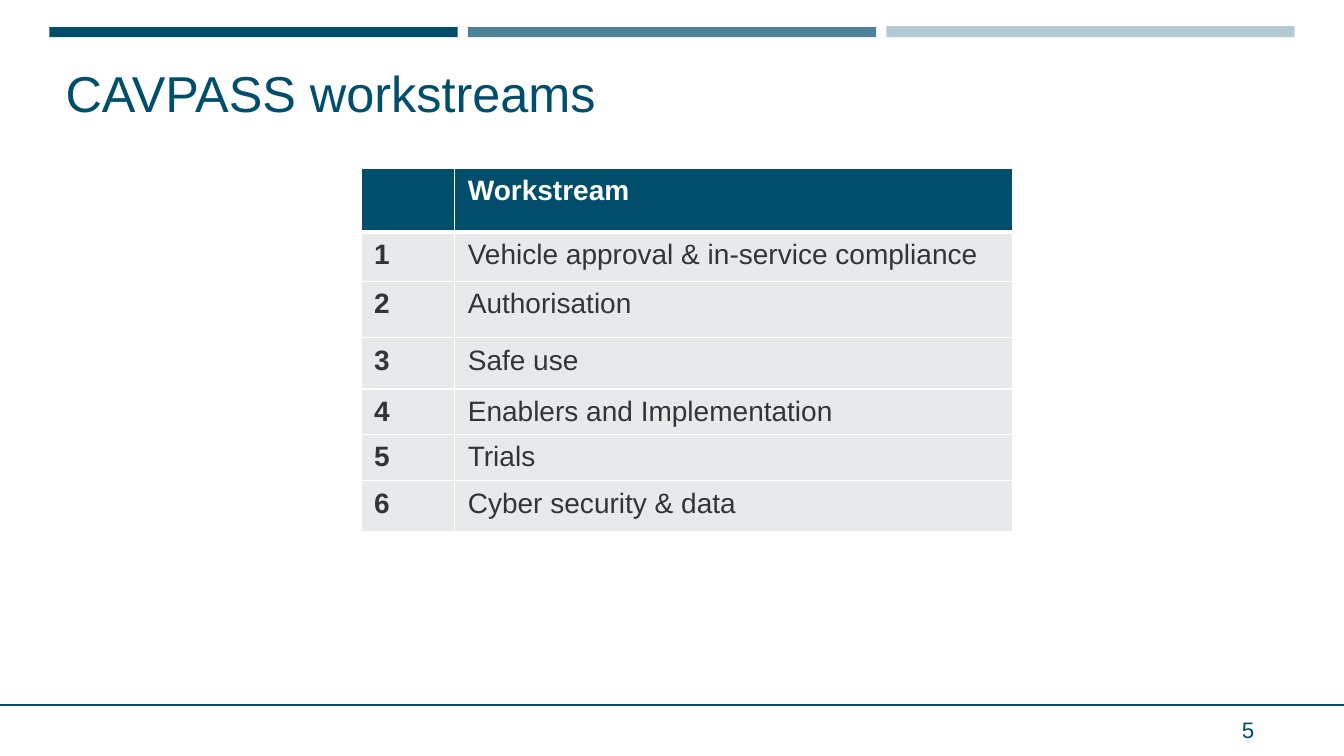
"""Build the CAVPASS workstreams slide."""
from dataclasses import dataclass

from lxml import etree
from pptx import Presentation
from pptx import util as u
from pptx.dml.color import RGBColor
from pptx.enum import shapes, text
from pptx.oxml.ns import qn

NAVY, STEEL, MIST = "004E6C", "4D8398", "B3CAD3"
WHITE, CHARCOAL, PALE = "FFFFFF", "323437", "E7E9EB"
BAR_WIDTH, BAR_PITCH = 4.05, 4.15
COLUMN_WIDTHS = (0.93, 5.53)
CELL_FORMAT = {
    "margin_left": u.Inches(0.13),
    "margin_right": u.Inches(0.13),
    "margin_top": u.Inches(0.07),
    "margin_bottom": u.Inches(0.07),
    "vertical_anchor": text.MSO_ANCHOR.TOP,
}


@dataclass(frozen=True)
class Bar:
    colour: str
    top: float
    height: float


@dataclass(frozen=True)
class Workstream:
    number: str
    name: str
    height: float


BARS = (Bar(NAVY, 0.27, 0.1), Bar(STEEL, 0.27, 0.1), Bar(MIST, 0.26, 0.11))
HEADING = Workstream("", "Workstream", 0.63)
WORKSTREAMS = (
    Workstream("1", "Vehicle approval & in-service compliance", 0.49),
    Workstream("2", "Authorisation", 0.56),
    Workstream("3", "Safe use", 0.51),
    Workstream("4", "Enablers and Implementation", 0.43),
    Workstream("5", "Trials", 0.46),
    Workstream("6", "Cyber security & data", 0.5),
)


def rgb(colour: str) -> RGBColor:
    return RGBColor.from_string(colour)


def apply(target, values: dict) -> None:
    for name, value in values.items():
        setattr(target, name, value)


def place(shape, left: float, top: float, width: float, height: float) -> None:
    apply(shape, {"left": u.Inches(left), "top": u.Inches(top),
                  "width": u.Inches(width), "height": u.Inches(height)})


def write(paragraph, words: str, size: float, colour: str, bold: bool = False) -> None:
    run = paragraph.add_run()
    run.text = words
    apply(run.font, {"name": "Arial", "size": u.Pt(size), "bold": bold})
    run.font.color.rgb = rgb(colour)


def draw_bar(slide, index: int, bar: Bar) -> None:
    band = slide.shapes.add_shape(
        shapes.MSO_SHAPE.RECTANGLE, u.Inches(0.49 + index * BAR_PITCH),
        u.Inches(bar.top), u.Inches(BAR_WIDTH), u.Inches(bar.height))
    band.shadow.inherit = False
    band.fill.solid()
    band.fill.fore_color.rgb = rgb(bar.colour)
    band.line.fill.background()


def draw_footer(slide) -> None:
    rule = slide.shapes.add_connector(
        shapes.MSO_CONNECTOR.STRAIGHT, 0, u.Inches(6.99), u.Inches(13.33), u.Inches(6.99))
    rule.line.width = u.Pt(1.5)
    rule.line.color.rgb = rgb(NAVY)
    etree.SubElement(rule._element.spPr, qn("a:effectLst"))
    page_number = slide.shapes.add_textbox(0, 0, 0, 0)
    place(page_number, 12.22, 7.04, 0.56, 0.4)
    apply(page_number.text_frame,
          {"word_wrap": True, "vertical_anchor": text.MSO_ANCHOR.MIDDLE})
    paragraph = page_number.text_frame.paragraphs[0]
    paragraph.space_after = u.Pt(6)
    write(paragraph, "5", 16, NAVY)


def draw_title(slide) -> None:
    title = slide.shapes.title
    place(title, 0.55, 0.5, 12.23, 0.77)
    apply(title.text_frame, {"word_wrap": True, "vertical_anchor": text.MSO_ANCHOR.BOTTOM,
                             "auto_size": text.MSO_AUTO_SIZE.NONE})
    paragraph = title.text_frame.paragraphs[0]
    apply(paragraph, {"alignment": text.PP_ALIGN.LEFT, "line_spacing": 0.9})
    write(paragraph, "CAVPASS workstreams", 36, NAVY)


def add_borders(cell, widths: dict[str, float]) -> None:
    properties = cell._tc.get_or_add_tcPr()
    for side, width in widths.items():
        border = etree.SubElement(properties, qn(f"a:{side}"), w=str(u.Pt(width)))
        fill = etree.SubElement(border, qn("a:solidFill"))
        etree.SubElement(fill, qn("a:srgbClr"), val=WHITE)


def draw_table(slide) -> None:
    rows = (HEADING, *WORKSTREAMS)
    table = slide.shapes.add_table(
        len(rows), len(COLUMN_WIDTHS), u.Inches(3.58), u.Inches(1.67),
        u.Inches(sum(COLUMN_WIDTHS)), u.Inches(sum(row.height for row in rows))).table
    apply(table, {"first_row": True, "first_col": True, "horz_banding": False})
    for column, width in zip(table.columns, COLUMN_WIDTHS):
        column.width = u.Inches(width)
    for index, stream in enumerate(rows):
        table.rows[index].height = u.Inches(stream.height)
        heading = index == 0
        top = 3 if index == 1 else 1
        bottom = 3 if heading else 1
        for column, words in enumerate((stream.number, stream.name)):
            cell = table.cell(index, column)
            apply(cell, CELL_FORMAT)
            add_borders(cell, {"lnL": 1, "lnR": 1, "lnT": top, "lnB": bottom})
            cell.fill.solid()
            cell.fill.fore_color.rgb = rgb(NAVY if heading else PALE)
            if words:
                write(cell.text_frame.paragraphs[0], words, 20,
                      WHITE if heading else CHARCOAL, heading or column == 0)


def main() -> None:
    deck = Presentation()
    apply(deck, {"slide_width": u.Inches(13.33), "slide_height": u.Inches(7.5)})
    slide = deck.slides.add_slide(deck.slide_layouts.get_by_name("Title Only"))
    for index, bar in enumerate(BARS):
        draw_bar(slide, index, bar)
    draw_title(slide)
    draw_table(slide)
    draw_footer(slide)
    deck.save("out.pptx")


if __name__ == "__main__":
    main()
